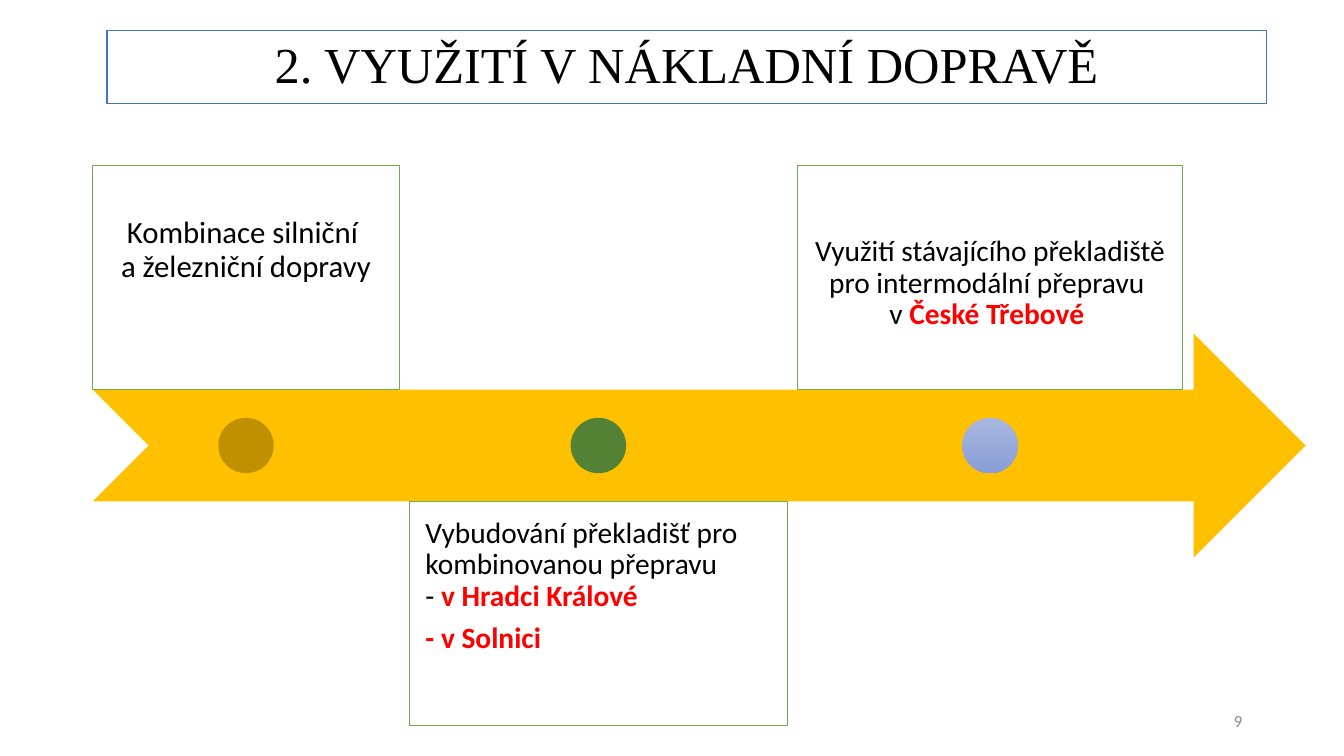
"""Build a timeline slide on the use of rail in freight transport."""
from dataclasses import dataclass

from pptx import Presentation
from pptx.dml.color import RGBColor
from pptx.enum.shapes import MSO_SHAPE
from pptx.enum.text import MSO_ANCHOR, MSO_AUTO_SIZE, PP_ALIGN
from pptx.util import Inches, Pt

ARROW, RECT, OVAL = MSO_SHAPE.NOTCHED_RIGHT_ARROW, MSO_SHAPE.RECTANGLE, MSO_SHAPE.OVAL
TOP, MIDDLE, BOTTOM = MSO_ANCHOR.TOP, MSO_ANCHOR.MIDDLE, MSO_ANCHOR.BOTTOM
LEFT, CENTER, RIGHT = PP_ALIGN.LEFT, PP_ALIGN.CENTER, PP_ALIGN.RIGHT
NO_FIT = MSO_AUTO_SIZE.NONE

COLORS = {
    "white": "FFFFFF", "black": "000000", "red": "FF0000", "gray": "898989",
    "blue": "4472C4", "green": "70AD47", "gold": "FFC000",
    "dark_gold": "BF9000", "dark_green": "548235",
    "pale_blue": "A8B7DF", "mid_blue": "889ED7",
}
BODY_FONT, TITLE_FONT = "Calibri", "Times New Roman"
CARD_LEFT, CARD_GAP, CARD_H = 0.92, 0.1, 2.22
ARROW_W, ARROW_TOP, DOT = 12.03, 3.31, 0.55
ARROW_MID = ARROW_TOP + CARD_H / 2


@dataclass
class Run:
    text: str
    color: str = "black"
    bold: bool = False


@dataclass
class Card:
    width: float
    top: float
    size: float
    inset: float
    bottom_inset: float
    anchor: MSO_ANCHOR
    align: PP_ALIGN
    dot: tuple[str, ...]
    paragraphs: list[list[Run]]


ABOVE = ARROW_MID - 1.25 * CARD_H
BELOW = ARROW_MID + 0.25 * CARD_H
CARDS = [
    Card(3.04, ABOVE, 22, 0.17, 1.05, BOTTOM, CENTER, ("dark_gold",),
         [[Run("Kombinace silniční \na železniční dopravy")]]),
    Card(3.75, BELOW, 21, 0.16, 0.16, TOP, LEFT, ("dark_green",),
         [[Run("Vybudování překladišť pro kombinovanou přepravu \n- "),
           Run("v Hradci Králové", "red", True)],
          [Run("- v Solnici", "red", True)]]),
    Card(3.82, ABOVE, 21, 0.16, 0.58, BOTTOM, CENTER, ("pale_blue", "mid_blue"),
         [[Run("Využití stávajícího překladiště pro intermodální přepravu \nv "),
           Run("České Třebové ", "red", True)]]),
]


def rgb(name: str) -> RGBColor:
    """Return the named colour."""
    return RGBColor.from_string(COLORS[name])


def apply(obj, values: dict) -> None:
    """Set attributes from a dict of format values."""
    for name, value in values.items():
        setattr(obj, name, value)


def add_run(p, run: Run, size: float, font: str = BODY_FONT) -> None:
    """Add a run, with line breaks where its text has them."""
    for i, line in enumerate(run.text.split("\n")):
        if i:
            p.add_line_break()
        r = p.add_run()
        r.text = line
        apply(r.font, {"size": Pt(size), "name": font, "bold": run.bold})
        r.font.color.rgb = rgb(run.color)


def add_shape(s, kind: MSO_SHAPE, box: tuple[float, ...], fill: tuple[str, ...],
              line: str | None = None):
    """Add a shape with a solid or gradient fill."""
    sp = s.shapes.add_shape(kind, *map(Inches, box))
    sp.shadow.inherit = False
    if len(fill) == 1:
        sp.fill.solid()
        sp.fill.fore_color.rgb = rgb(fill[0])
    else:
        sp.fill.gradient()
        sp.fill.gradient_angle = 270
        for stop, name in zip(sp.fill.gradient_stops, fill):
            stop.color.rgb = rgb(name)
    if line:
        sp.line.color.rgb = rgb(line)
        sp.line.width = Pt(1)
    else:
        sp.line.fill.background()
    return sp


def add_card(s, card: Card, left: float) -> None:
    """Add a text card and its dot on the arrow."""
    sp = add_shape(s, RECT, (left, card.top, card.width, CARD_H), ("white",), "green")
    tf = sp.text_frame
    inset = Inches(card.inset)
    apply(tf, {"word_wrap": True, "vertical_anchor": card.anchor,
               "margin_left": inset, "margin_right": inset, "margin_top": inset,
               "margin_bottom": Inches(card.bottom_inset)})
    for i, runs in enumerate(card.paragraphs):
        p = tf.add_paragraph() if i else tf.paragraphs[0]
        apply(p, {"alignment": card.align, "line_spacing": 0.9,
                  "space_before": Pt(0.35 * card.size if i else 0)})
        for run in runs:
            add_run(p, run, card.size)
    dot_left = left + (card.width - DOT) / 2
    add_shape(s, OVAL, (dot_left, ARROW_MID - DOT / 2, DOT, DOT), card.dot)


def add_title(s) -> None:
    """Fill and format the title placeholder."""
    sp = s.shapes.title
    apply(sp, {"left": Inches(1.06), "top": Inches(0.3),
               "width": Inches(11.5), "height": Inches(0.73)})
    sp.line.color.rgb = rgb("blue")
    sp.line.width = Pt(1)
    apply(sp.text_frame, {"word_wrap": True, "auto_size": NO_FIT,
                          "vertical_anchor": MIDDLE})
    p = sp.text_frame.paragraphs[0]
    apply(p, {"alignment": CENTER, "line_spacing": 0.9})
    add_run(p, Run("2. VYUŽITÍ V NÁKLADNÍ DOPRAVĚ"), 36, TITLE_FONT)


def add_number(s) -> None:
    """Add the slide number."""
    tf = s.shapes.add_textbox(*map(Inches, (9.42, 6.95, 3, 0.4))).text_frame
    apply(tf, {"word_wrap": True, "vertical_anchor": MIDDLE})
    tf.paragraphs[0].alignment = RIGHT
    add_run(tf.paragraphs[0], Run("9", "gray"), 12)


def main() -> None:
    """Build and save the presentation."""
    prs = Presentation()
    prs.slide_width, prs.slide_height = Inches(13.33), Inches(7.5)
    s = prs.slides.add_slide(prs.slide_layouts[5])
    add_title(s)
    add_shape(s, ARROW, (CARD_LEFT, ARROW_TOP, ARROW_W, CARD_H), ("gold",))
    left = CARD_LEFT
    for card in CARDS:
        add_card(s, card, left)
        left += card.width + CARD_GAP
    add_number(s)
    prs.save("out.pptx")


if __name__ == "__main__":
    main()
